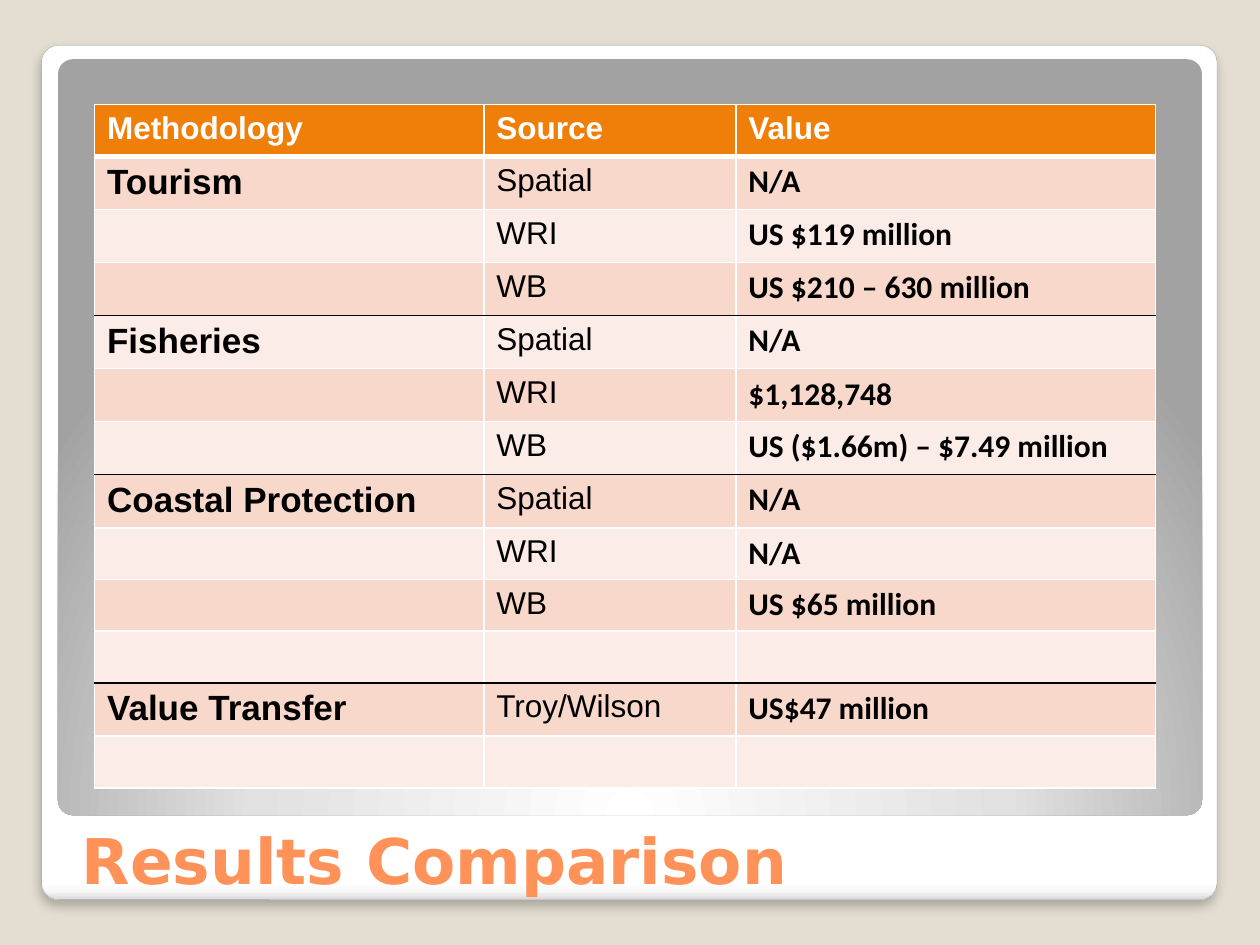
from dataclasses import dataclass
from typing import Any, Optional

from lxml import etree
from pptx import Presentation
from pptx import util as u
from pptx.dml.color import RGBColor
from pptx.enum import shapes, text
from pptx.oxml.ns import qn

COLORS = {
    "backdrop": "E3DED1",
    "white": "FFFFFF",
    "black": "000000",
    "edge": "A4A4A4",
    "title": "FF9258",
    "header": "F07F09",
    "odd": "F9D8CC",
    "even": "FCECE7",
}
FORMATS = {
    "title": {"name": "DejaVu Sans", "size": u.Pt(36), "bold": True},
    "header": {"name": "Arial", "size": u.Pt(18), "bold": True},
    "method": {"name": "Arial", "size": u.Pt(20), "bold": True},
    "source": {"name": "Arial", "size": u.Pt(18), "bold": False},
    "value": {"name": "Calibri", "size": u.Pt(18), "bold": True},
}
COLUMN_FORMATS = ("method", "source", "value")
COLUMN_WIDTHS = (3.09, 2, 3.33)
HEADINGS = ("Methodology", "Source", "Value")


@dataclass(frozen=True)
class Panel:
    left: float
    top: float
    width: float
    height: float
    stops: tuple[tuple[int, str], ...]
    direction: tuple[str, dict[str, str]]
    edge: Optional[str] = None
    shaded: bool = False


@dataclass(frozen=True)
class Result:
    method: str = ""
    source: str = ""
    value: str = ""
    height: float = 0.41
    closes_group: bool = False


PANELS = (
    Panel(0.33, 0.36, 9.33, 6.78,
          ((0, "FFFFFF"), (98, "FFFFFF"), (99, "F7F7F7"), (100, "DADADA")),
          ("lin", {"ang": "5400000", "scaled": "0"}), "edge", True),
    Panel(0.46, 0.47, 9.08, 6,
          ((0, "FFFFFF"), (55, "E1E1E1"), (100, "A2A2A2")),
          ("path", {"path": "circle"})),
)
RESULTS = (
    Result("Tourism", "Spatial", "N/A"),
    Result("", "WRI", "US $119 million", 0.42),
    Result("", "WB", "US $210 – 630 million", 0.42, True),
    Result("Fisheries", "Spatial", "N/A"),
    Result("", "WRI", "$1,128,748", 0.42),
    Result("", "WB", "US ($1.66m) – $7.49 million", 0.42, True),
    Result("Coastal Protection", "Spatial", "N/A"),
    Result("", "WRI", "N/A"),
    Result("", "WB", "US $65 million"),
    Result(closes_group=True),
    Result("Value Transfer", "Troy/Wilson", "US$47 million"),
    Result(),
)


def rgb(color: str) -> RGBColor:
    return RGBColor.from_string(COLORS[color])


def child(parent: Any, tag: str, **attributes: str) -> Any:
    return etree.SubElement(parent, qn(f"a:{tag}"), attributes)


def write(frame: Any, words: str, style: str, color: str) -> None:
    run = frame.paragraphs[0].add_run()
    run.text = words
    for attribute, value in FORMATS[style].items():
        setattr(run.font, attribute, value)
    run.font.color.rgb = rgb(color)


def draw_panel(slide: Any, panel: Panel) -> None:
    plate = slide.shapes.add_shape(
        shapes.MSO_SHAPE.ROUNDED_RECTANGLE,
        *map(u.Inches, (panel.left, panel.top, panel.width, panel.height)))
    plate.adjustments[0] = 0.02
    plate.shadow.inherit = False
    plate.fill.gradient()
    properties = plate.element.spPr
    gradient = properties.find(qn("a:gradFill"))
    for part in list(gradient):
        gradient.remove(part)
    stops = child(gradient, "gsLst")
    for position, color in panel.stops:
        stop = child(stops, "gs", pos=str(position * 1000))
        child(stop, "srgbClr", val=color)
    tag, attributes = panel.direction
    direction = child(gradient, tag, **attributes)
    if tag == "path":
        child(direction, "fillToRect", l="50000", t="175000", r="50000", b="-75000")
    if panel.edge:
        plate.line.color.rgb = rgb(panel.edge)
        plate.line.width = u.Pt(0.16)
    else:
        plate.line.fill.background()
    if panel.shaded:
        shadow = child(properties.find(qn("a:effectLst")), "outerShdw",
                       blurRad=str(u.Pt(6)), dist=str(u.Pt(4)),
                       dir="5400000", algn="t", rotWithShape="0")
        tint = child(shadow, "srgbClr", val=COLORS["black"])
        child(tint, "alpha", val="25000")


def draw_borders(cell: Any, top: tuple[str, int], bottom: tuple[str, int]) -> None:
    properties = cell._tc.get_or_add_tcPr()
    side = ("white", 1)
    borders = {"lnL": side, "lnR": side, "lnT": top, "lnB": bottom}
    for index, (tag, (color, width)) in enumerate(borders.items()):
        border = child(properties, tag, w=str(u.Pt(width)))
        child(child(border, "solidFill"), "srgbClr", val=COLORS[color])
        properties.insert(index, border)


def draw_results(slide: Any) -> None:
    rows = (Result(*HEADINGS), *RESULTS)
    table = slide.shapes.add_table(
        len(rows), len(HEADINGS), u.Inches(0.75), u.Inches(0.83),
        u.Inches(sum(COLUMN_WIDTHS)), u.Inches(sum(row.height for row in rows))).table
    for column, width in zip(table.columns, COLUMN_WIDTHS):
        column.width = u.Inches(width)
    top = ("white", 1)
    for index, row in enumerate(rows):
        table.rows[index].height = u.Inches(row.height)
        is_header = index == 0
        fill = "header" if is_header else ("even", "odd")[index % 2]
        bottom = ("white", 3) if is_header else ("black" if row.closes_group else "white", 1)
        entries = (row.method, row.source, row.value)
        for cell, words, style in zip(table.rows[index].cells, entries, COLUMN_FORMATS):
            cell.margin_bottom = u.Inches(0.04)
            cell.fill.solid()
            cell.fill.fore_color.rgb = rgb(fill)
            draw_borders(cell, top, bottom)
            if words:
                write(cell.text_frame, words, "header" if is_header else style,
                      "white" if is_header else "black")
        top = bottom


def draw_title(slide: Any) -> None:
    title = slide.shapes.add_textbox(*map(u.Inches, (0.55, 6.02, 8.95, 1.15)))
    title.text_frame.word_wrap = True
    title.text_frame.vertical_anchor = text.MSO_ANCHOR.BOTTOM
    write(title.text_frame, "Results Comparison", "title", "title")


def main() -> None:
    deck = Presentation()
    deck.slide_width, deck.slide_height = u.Inches(10), u.Inches(7.5)
    slide = deck.slides.add_slide(deck.slide_layouts[6])
    slide.background.fill.solid()
    slide.background.fill.fore_color.rgb = rgb("backdrop")
    for panel in PANELS:
        draw_panel(slide, panel)
    draw_title(slide)
    draw_results(slide)
    deck.save("out.pptx")


if __name__ == "__main__":
    main()
